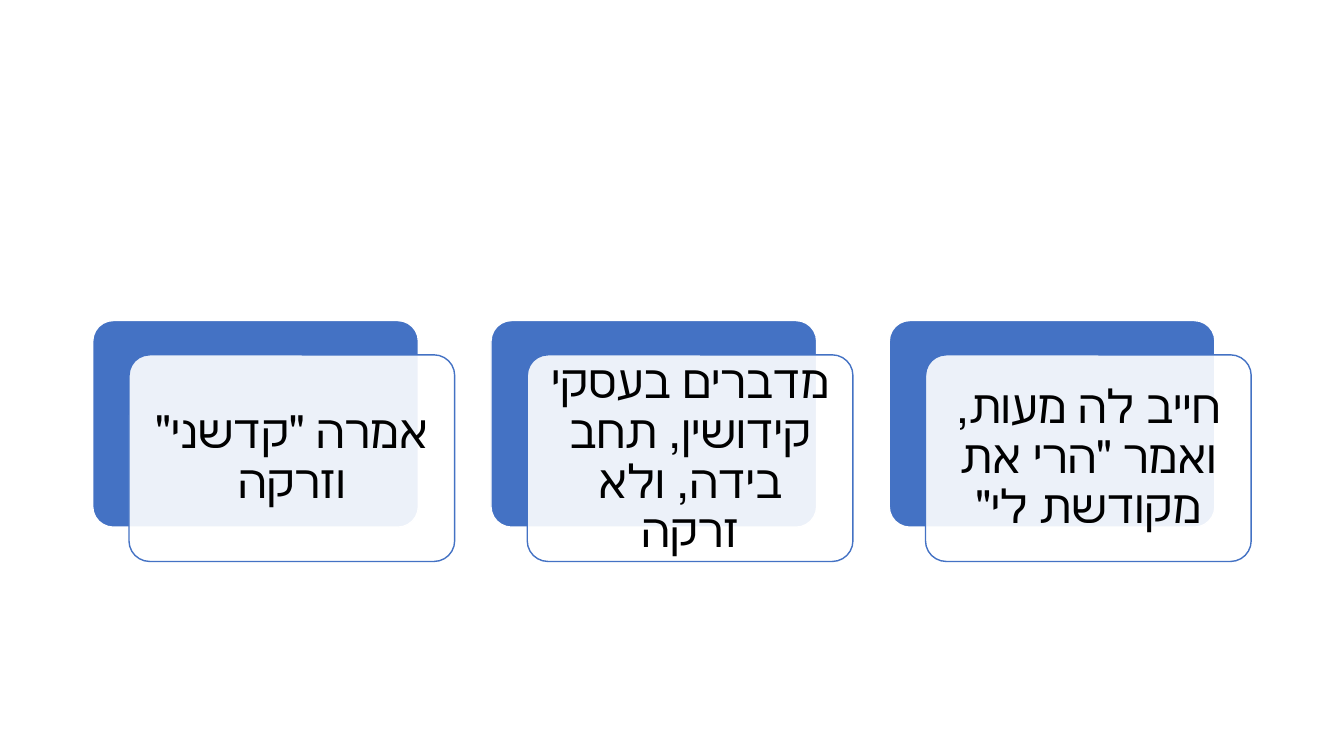
from dataclasses import dataclass

from lxml.etree import SubElement
from pptx import Presentation
from pptx.dml.color import RGBColor
from pptx.enum.lang import MSO_LANGUAGE_ID
from pptx.enum.shapes import MSO_SHAPE
from pptx.enum.text import MSO_ANCHOR, PP_ALIGN
from pptx.oxml.ns import qn
from pptx.shapes.autoshape import Shape
from pptx.shapes.group import GroupShape
from pptx.util import Emu, Pt

EMU_PER_PX = 9144


@dataclass(frozen=True)
class Theme:
    accent: RGBColor = RGBColor(0x44, 0x72, 0xC4)
    paper: RGBColor = RGBColor(0xFF, 0xFF, 0xFF)
    ink: RGBColor = RGBColor(0x00, 0x00, 0x00)
    font: str = "Calibri"
    hebrew_font: str = "+mn-cs"
    text_size: int = 33
    line_width: int = 1
    card_opacity: int = 90


@dataclass(frozen=True)
class Box:
    left: int
    top: int
    width: int = 323
    height: int = 205

    def shifted(self, right: int, down: int) -> "Box":
        return Box(self.left + right, self.top + down, self.width, self.height)


THEME = Theme()
FIRST_BOX = Box(92, 318)
CASE_STEP = 395
CARD_OFFSET = (36, 34)
CARD_INSET = 14
CASES = (
    'אמרה "קדשני" וזרקה',
    "מדברים בעסקי קידושין, תחב בידה, ולא זרקה",
    'חייב לה מעות, ואמר "הרי את מקודשת לי"',
)


def px(length: int) -> Emu:
    return Emu(length * EMU_PER_PX)


def apply_format(target: object, values: dict[str, object]) -> None:
    for name, value in values.items():
        setattr(target, name, value)


def add_round_box(group: GroupShape, box: Box, fill: RGBColor, line: RGBColor) -> Shape:
    shape = group.shapes.add_shape(
        MSO_SHAPE.ROUNDED_RECTANGLE,
        px(box.left), px(box.top), px(box.width), px(box.height),
    )
    shape.adjustments[0] = 0.1
    shape.shadow.inherit = False
    shape.fill.solid()
    shape.fill.fore_color.rgb = fill
    shape.line.color.rgb = line
    shape.line.width = Pt(THEME.line_width)
    return shape


def set_opacity(shape: Shape, percent: int) -> None:
    color = shape.element.spPr.find(f"{qn('a:solidFill')}/{qn('a:srgbClr')}")
    SubElement(color, qn("a:alpha"), val=str(percent * 1000))


def write_case(card: Shape, text: str) -> None:
    frame = card.text_frame
    sides = ("left", "top", "right", "bottom")
    apply_format(frame, {f"margin_{side}": px(CARD_INSET) for side in sides})
    apply_format(frame, {"word_wrap": True, "vertical_anchor": MSO_ANCHOR.MIDDLE})
    para = frame.paragraphs[0]
    apply_format(para, {"alignment": PP_ALIGN.CENTER, "line_spacing": 0.9})
    para._p.get_or_add_pPr().set("rtl", "1")
    span = para.add_run()
    span.text = text
    apply_format(span.font, {
        "size": Pt(THEME.text_size),
        "name": THEME.font,
        "language_id": MSO_LANGUAGE_ID.HEBREW,
    })
    span.font.color.rgb = THEME.ink
    SubElement(span._r.get_or_add_rPr(), qn("a:cs"), typeface=THEME.hebrew_font)


def main() -> None:
    deck = Presentation()
    apply_format(deck, {"slide_width": px(1333), "slide_height": px(750)})
    page = deck.slides.add_slide(deck.slide_layouts[6])
    group = page.shapes.add_group_shape()
    for index, text in enumerate(CASES):
        back = FIRST_BOX.shifted(index * CASE_STEP, 0)
        add_round_box(group, back, THEME.accent, THEME.paper)
        card = add_round_box(group, back.shifted(*CARD_OFFSET), THEME.paper, THEME.accent)
        set_opacity(card, THEME.card_opacity)
        write_case(card, text)
    deck.save("out.pptx")


if __name__ == "__main__":
    main()
